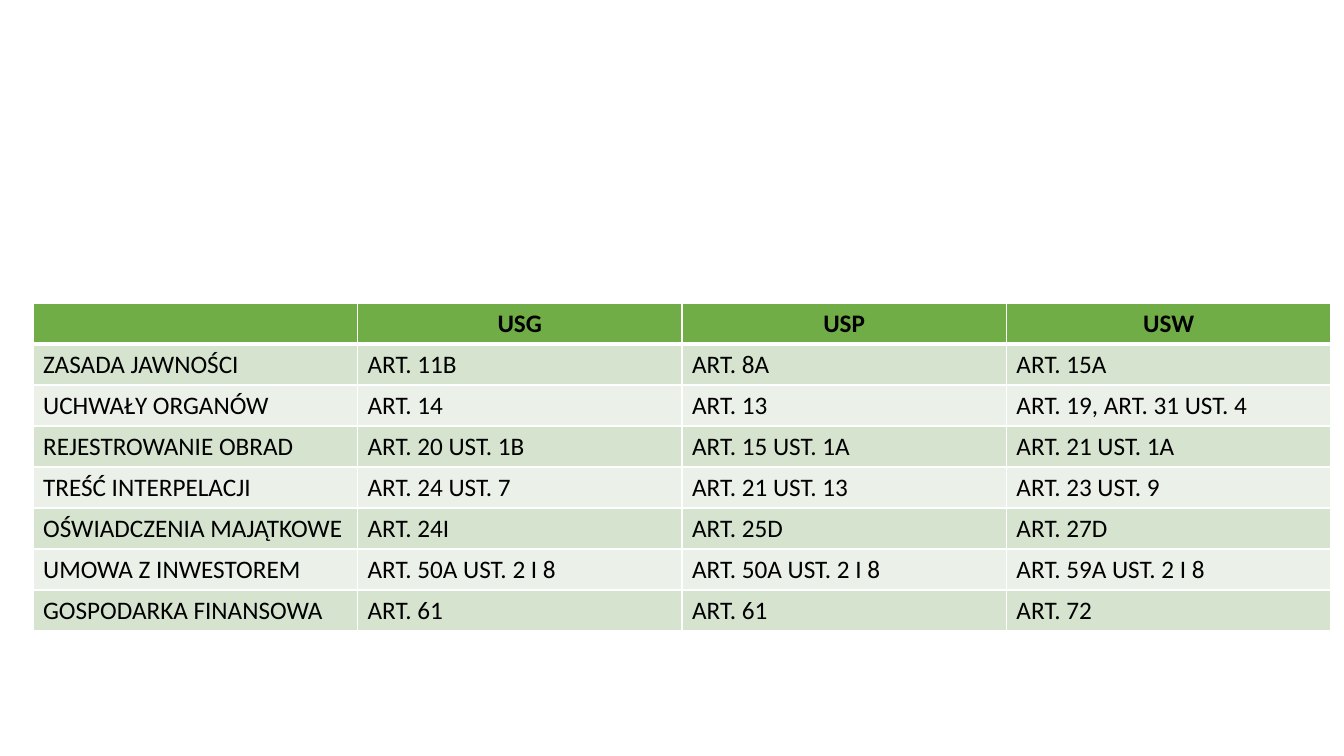
from dataclasses import dataclass

from lxml import etree
from pptx import Presentation
from pptx.dml.color import RGBColor
from pptx.enum.text import MSO_ANCHOR, PP_ALIGN
from pptx.oxml.ns import qn
from pptx.util import Emu, Pt

LEFT, CENTER = PP_ALIGN.LEFT, PP_ALIGN.CENTER
TOP = MSO_ANCHOR.TOP
SLIDE_W, SLIDE_H = 1344, 756
SCALE = 12192000 / SLIDE_W
TABLE_BOX = (33, 303, 1298, 328)


@dataclass(frozen=True)
class Theme:
    """Colours, font and sizes of the slide."""
    header: str = "70AD47"
    bands: tuple = ("D5E3CF", "EBF1E9")
    border: str = "FFFFFF"
    text: str = "000000"
    font: str = "Calibri"
    size: int = 18
    thin: int = 1
    thick: int = 3


THEME = Theme()
ROWS = [
    ("", "USG", "USP", "USW"),
    ("ZASADA JAWNOŚCI", "ART. 11B", "ART. 8A", "ART. 15A"),
    ("UCHWAŁY ORGANÓW", "ART. 14", "ART. 13", "ART. 19, ART. 31 UST. 4"),
    ("REJESTROWANIE OBRAD", "ART. 20 UST. 1B", "ART. 15 UST. 1A", "ART. 21 UST. 1A"),
    ("TREŚĆ INTERPELACJI", "ART. 24 UST. 7", "ART. 21 UST. 13", "ART. 23 UST. 9"),
    ("OŚWIADCZENIA MAJĄTKOWE", "ART. 24I", "ART. 25D", "ART. 27D"),
    ("UMOWA Z INWESTOREM", "ART. 50A UST. 2 I 8", "ART. 50A UST. 2 I 8",
     "ART. 59A UST. 2 I 8"),
    ("GOSPODARKA FINANSOWA", "ART. 61", "ART. 61", "ART. 72"),
]


def px(n):
    """Turn pixels into EMU."""
    return Emu(round(n * SCALE))


def set_borders(cell, widths):
    """Draw the four cell borders with the given widths in points."""
    tc_pr = cell._tc.get_or_add_tcPr()
    for side, width in widths.items():
        ln = etree.SubElement(tc_pr, qn(f"a:ln{side}"), w=str(Pt(width)))
        fill = etree.SubElement(ln, qn("a:solidFill"))
        etree.SubElement(fill, qn("a:srgbClr"), val=THEME.border)


def format_cell(cell, text, row):
    """Write one cell and style it by its row."""
    is_header = row == 0
    set_borders(cell, {
        "L": THEME.thin,
        "R": THEME.thin,
        "T": THEME.thick if row == 1 else THEME.thin,
        "B": THEME.thick if is_header else THEME.thin,
    })
    color = THEME.header if is_header else THEME.bands[(row - 1) % 2]
    cell.fill.solid()
    cell.fill.fore_color.rgb = RGBColor.from_string(color)
    cell.vertical_anchor = TOP
    p = cell.text_frame.paragraphs[0]
    p.alignment = CENTER if is_header else LEFT
    font = p.font
    if text:
        r = p.add_run()
        r.text = text
        font = r.font
    formats = {"name": THEME.font, "size": Pt(THEME.size), "bold": is_header}
    for name, value in formats.items():
        setattr(font, name, value)
    font.color.rgb = RGBColor.from_string(THEME.text)


def add_articles_table(s, box):
    """Fill the box with the table of articles in equal rows and columns."""
    x, y, w, h = box
    n_rows, n_cols = len(ROWS), len(ROWS[0])
    table = s.shapes.add_table(n_rows, n_cols, px(x), px(y), px(w), px(h)).table
    for column in table.columns:
        column.width = px(w / n_cols)
    for row, texts in enumerate(ROWS):
        table.rows[row].height = px(h / n_rows)
        for col, text in enumerate(texts):
            format_cell(table.cell(row, col), text, row)


def main():
    """Build the slide and save it."""
    prs = Presentation()
    prs.slide_width, prs.slide_height = px(SLIDE_W), px(SLIDE_H)
    s = prs.slides.add_slide(prs.slide_layouts.get_by_name("Blank"))
    add_articles_table(s, TABLE_BOX)
    prs.save("out.pptx")


if __name__ == "__main__":
    main()
